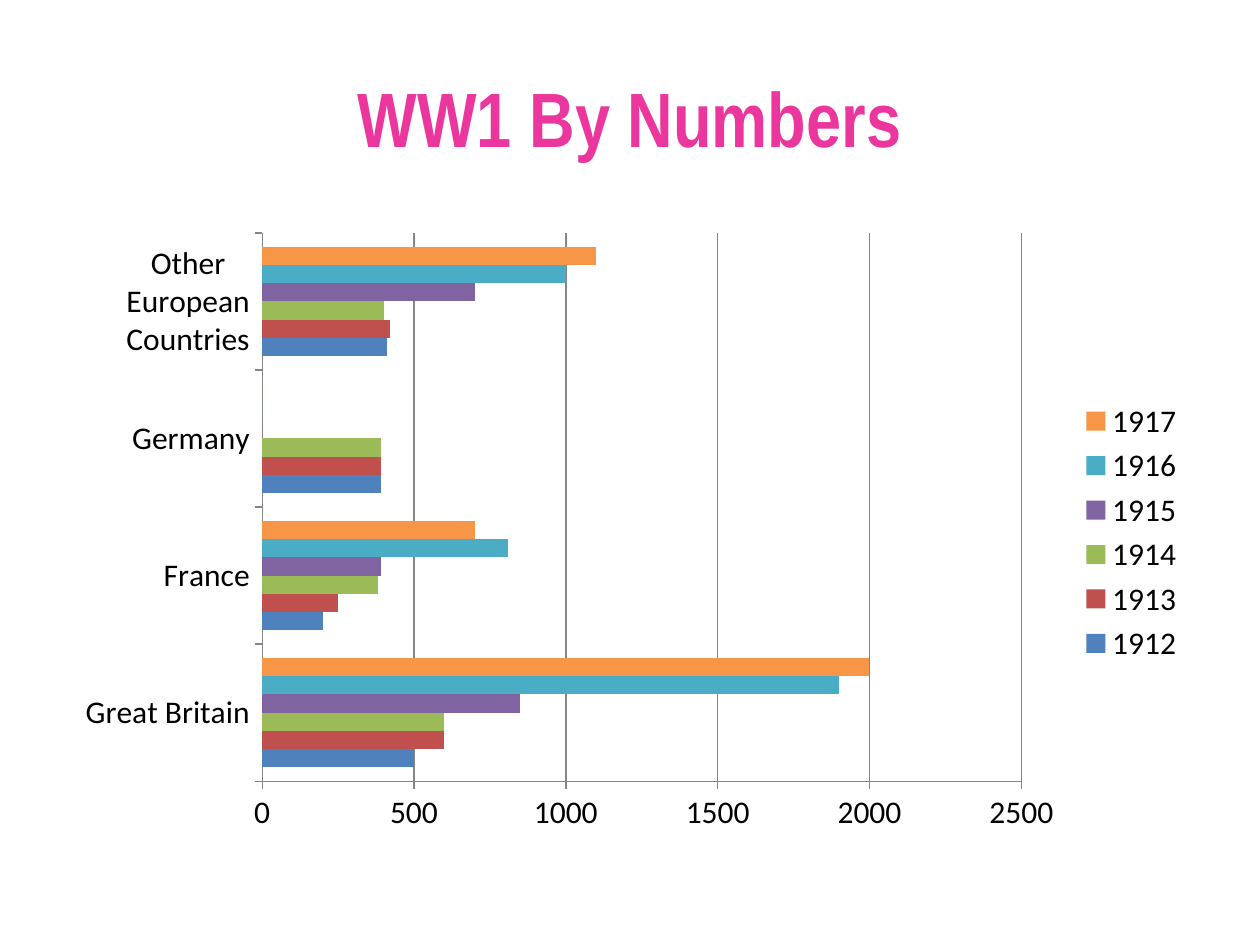
from dataclasses import dataclass

from pptx import Presentation
from pptx.chart.data import CategoryChartData
from pptx.dml.color import RGBColor
from pptx.enum.chart import XL_CHART_TYPE as ChartType
from pptx.enum.chart import XL_LEGEND_POSITION as LegendPosition
from pptx.enum.chart import XL_TICK_MARK as TickMark
from pptx.enum.text import MSO_ANCHOR as Anchor
from pptx.enum.text import PP_ALIGN as Align
from pptx.util import Emu, Pt

EMU_PER_PX = 9144  # 100 px to the inch

COLORS = {
    "title": "EA369D",
    "text": "000000",
    "axis": "868686",
    "blue": "4F81BD",
    "red": "C0504D",
    "green": "9BBB59",
    "purple": "8064A2",
    "teal": "4BACC6",
    "orange": "F79646",
}


@dataclass(frozen=True)
class YearSeries:
    year: str
    values: tuple[int, ...]
    color: str


COUNTRIES = ("Great Britain", "France", "Germany", "Other European Countries")
YEARS = (
    YearSeries("1912", (500, 200, 390, 410), "blue"),
    YearSeries("1913", (600, 250, 390, 420), "red"),
    YearSeries("1914", (600, 380, 390, 400), "green"),
    YearSeries("1915", (850, 390, 0, 700), "purple"),
    YearSeries("1916", (1900, 810, 0, 1000), "teal"),
    YearSeries("1917", (2000, 700, 0, 1100), "orange"),
)


def px(length: int) -> Emu:
    return Emu(length * EMU_PER_PX)


def rgb(name: str) -> RGBColor:
    return RGBColor.from_string(COLORS[name])


def format_font(font, *, name: str, size: int, color: str, bold: bool = False) -> None:
    font.name = name
    font.size = Pt(size)
    font.bold = bold
    font.color.rgb = rgb(color)


def write_text(box, text: str, *, align: Align, anchor: Anchor, **font_format) -> None:
    frame = box.text_frame
    frame.word_wrap = True
    frame.vertical_anchor = anchor
    para = frame.paragraphs[0]
    para.alignment = align
    span = para.add_run()
    span.text = text
    format_font(span.font, **font_format)


def format_line(line) -> None:
    line.color.rgb = rgb("axis")
    line.width = Pt(0.75)


def add_year_chart(page, left: int, top: int, width: int, height: int) -> None:
    data = CategoryChartData()
    data.categories = COUNTRIES
    for entry in YEARS:
        data.add_series(entry.year, entry.values)
    chart = page.shapes.add_chart(
        ChartType.BAR_CLUSTERED, px(left), px(top), px(width), px(height), data
    ).chart
    chart.has_title = False
    format_font(chart.font, name="Calibri", size=18, color="text")

    # Bars
    plot = chart.plots[0]
    plot.vary_by_categories = False
    plot.gap_width = 150
    for series, entry in zip(plot.series, YEARS):
        series.invert_if_negative = False
        series.format.fill.solid()
        series.format.fill.fore_color.rgb = rgb(entry.color)

    # Axes
    for axis in (chart.category_axis, chart.value_axis):
        axis.major_tick_mark = TickMark.OUTSIDE
        axis.minor_tick_mark = TickMark.NONE
        format_line(axis.format.line)
    value_axis = chart.value_axis
    value_axis.minimum_scale = 0
    value_axis.maximum_scale = 2500
    value_axis.major_unit = 500
    value_axis.has_major_gridlines = True
    format_line(value_axis.major_gridlines.format.line)

    # Legend
    chart.has_legend = True
    chart.legend.position = LegendPosition.RIGHT
    chart.legend.include_in_layout = False


def main() -> None:
    deck = Presentation()
    deck.slide_width, deck.slide_height = px(1000), px(750)
    page = deck.slides.add_slide(deck.slide_layouts[5])

    # Title
    title = page.shapes.title
    title.left, title.top, title.width, title.height = map(px, (50, 30, 900, 125))
    write_text(title, "WW1 By Numbers", align=Align.CENTER, anchor=Anchor.MIDDLE,
               name="Arial Narrow", size=44, color="title", bold=True)

    # Chart
    add_year_chart(page, 50, 175, 900, 495)

    deck.save("out.pptx")


if __name__ == "__main__":
    main()
